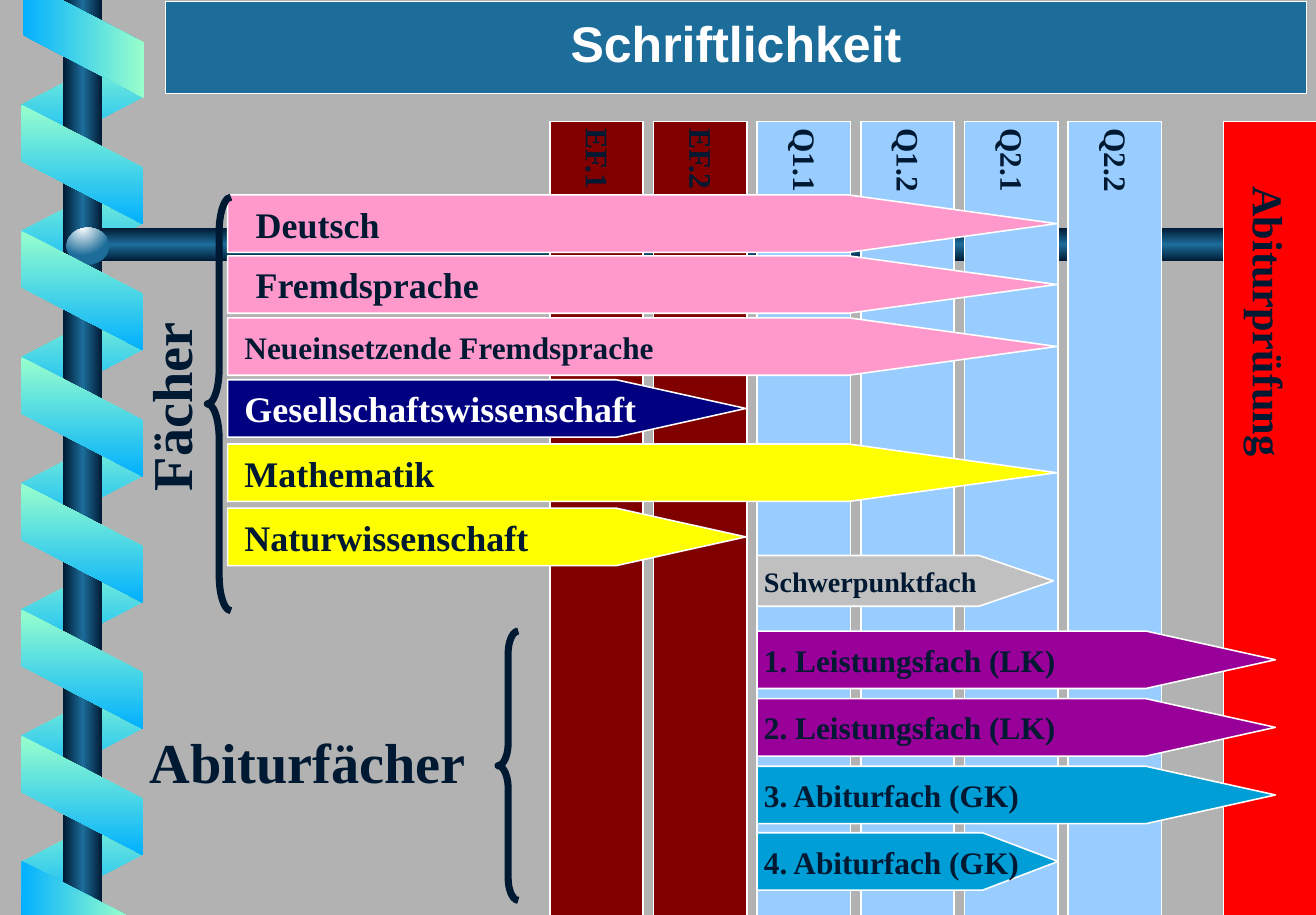
from pptx import Presentation
from pptx.dml.color import RGBColor
from pptx.enum.shapes import MSO_SHAPE
from pptx.enum.text import MSO_ANCHOR, PP_ALIGN
from pptx.oxml import parse_xml
from pptx.oxml.ns import nsdecls, qn
from pptx.util import Pt

PX = 9144  # 100 px to the inch
NAVY, BLUE, WHITE = "001932", "1C6D9A", "FFFFFF"
MAROON, SKY, RED = "800000", "99CCFF", "FF0000"
PINK, YELLOW, PURPLE, CYAN = "FF99CC", "FFFF00", "990099", "009ED6"
DOWN, RIGHT = '<a:lin ang="5400000" scaled="0"/>', '<a:lin ang="0" scaled="0"/>'
GLOW = '<a:path path="circle"><a:fillToRect l="38000" t="-20000" r="62000" b="120000"/></a:path>'
color = RGBColor.from_string


def paint(shape, fill=None, line=None, width=1, direction=RIGHT):
    """Fill with a colour, a list of evenly spaced gradient colours, or nothing."""
    shape.shadow.inherit = False
    if fill is None:
        shape.fill.background()
    else:
        shape.fill.solid()
        shape.fill.fore_color.rgb = color(fill if isinstance(fill, str) else fill[0])
    if isinstance(fill, list):
        stops = "".join(
            f'<a:gs pos="{100000 * i // (len(fill) - 1)}"><a:srgbClr val="{stop}"/></a:gs>'
            for i, stop in enumerate(fill))
        solid = shape.element.spPr.find(qn("a:solidFill"))
        solid.getparent().replace(solid, parse_xml(
            f'<a:gradFill {nsdecls("a")} rotWithShape="1"><a:gsLst>{stops}</a:gsLst>'
            f'{direction}</a:gradFill>'))
    if line:
        shape.line.color.rgb = color(line)
        shape.line.width = Pt(width)
    else:
        shape.line.fill.background()


def write(shape, text, size=20, fill=NAVY, font="Times New Roman",
          align=PP_ALIGN.LEFT, left=6, right=6, spacing=None):
    frame = shape.text_frame
    frame.word_wrap = True
    frame.vertical_anchor = MSO_ANCHOR.MIDDLE
    frame.margin_left, frame.margin_right = left * PX, right * PX
    frame.margin_top = frame.margin_bottom = 0
    paragraph = frame.paragraphs[0]
    paragraph.text = text
    paragraph.alignment = align
    if spacing:
        paragraph.line_spacing = spacing
    paragraph.font.name = font
    paragraph.font.size = Pt(size)
    paragraph.font.bold = True
    paragraph.font.color.rgb = color(fill)


presentation = Presentation()
presentation.slide_width, presentation.slide_height = 1168 * PX, 812 * PX
slide = presentation.slides.add_slide(presentation.slide_layouts[6])
slide.background.fill.solid()
slide.background.fill.fore_color.rgb = color("B2B2B2")
shapes = slide.shapes

# Spiral ribbon: rising bands behind the pole, falling bands in front of it
mint_to_blue = ["99FFCC", "01B0FF"]
blue_to_mint = mint_to_blue[::-1]
back, front = [], []
for turn in range(7):
    top = 37 + 112 * turn
    back.append(([(127, top + 49), (19, top + 105), (19, top + 56), (127, top)],
                 mint_to_blue, DOWN))
for turn in range(6):
    top = 93 + 112 * turn
    front.append(([(19, top), (127, top + 56), (127, top + 106), (19, top + 50)],
                  mint_to_blue, DOWN))
front.append(([(20, 0), (20, 31), (128, 87), (128, 38), (55, 0)], blue_to_mint, RIGHT))
front.append(([(19, 764), (112, 812), (19, 812)], blue_to_mint, RIGHT))

for layer in (back, front):
    for points, stops, direction in layer:
        builder = shapes.build_freeform(*points[0], scale=PX)
        builder.add_line_segments(points[1:])
        paint(builder.convert_to_shape(), stops, direction=direction)
    if layer is back:
        # Pole, crossbar and ball
        pole = shapes.add_shape(MSO_SHAPE.RECTANGLE, 56 * PX, 0, 35 * PX, 812 * PX)
        paint(pole, [NAVY, BLUE, NAVY])
        crossbar = shapes.add_shape(MSO_SHAPE.PENTAGON, 70 * PX, 202 * PX, 1098 * PX, 30 * PX)
        crossbar.adjustments[0] = 0.63
        crossbar.rotation = 180
        paint(crossbar, [NAVY, BLUE, NAVY], direction=DOWN)
        ball = shapes.add_shape(MSO_SHAPE.OVAL, 59 * PX, 202 * PX, 38 * PX, 33 * PX)
        paint(ball, ["FEFFFF", BLUE], direction=GLOW)

# Title
title = shapes.add_shape(MSO_SHAPE.RECTANGLE, 147 * PX, 1 * PX, 1013 * PX, 82 * PX)
paint(title, BLUE, WHITE, 0.75)
write(title, "Schriftlichkeit", size=32, fill=WHITE, font="Arial",
      align=PP_ALIGN.CENTER, spacing=0.85)

# Columns of the half-years and the final exam
half_years = ["EF.1", "EF.2", "Q1.1", "Q1.2", "Q2.1", "Q2.2"]
columns = [(488 + 92 * i, MAROON if i < 2 else SKY) for i in range(len(half_years))]
for left, fill in columns + [(1086, RED)]:
    column = shapes.add_shape(MSO_SHAPE.RECTANGLE, left * PX, 108 * PX, 83 * PX, 705 * PX)
    paint(column, fill, WHITE)

# Subject arrows: text, left, top, width, height, tip, fill, text size, text inset
arrows = [
    ("Deutsch", 202, 173, 736, 51, 185, PINK, 23, 25),
    ("Fremdsprache", 202, 227, 736, 51, 185, PINK, 23, 25),
    ("Neueinsetzende Fremdsprache", 202, 282, 736, 51, 185, PINK, 20, 15),
    ("Gesellschaftswissenschaft", 202, 337, 460, 51, 115, "000080", 23, 15),
    ("Mathematik", 202, 394, 736, 51, 185, YELLOW, 23, 15),
    ("Naturwissenschaft", 202, 451, 460, 51, 115, YELLOW, 23, 15),
    ("Schwerpunktfach", 672, 493, 263, 45, 66, "C0C0C0", 18, 6),
    ("1. Leistungsfach (LK)", 672, 560, 460, 51, 115, PURPLE, 20, 6),
    ("2. Leistungsfach (LK)", 672, 620, 460, 51, 115, PURPLE, 20, 6),
    ("3. Abiturfach (GK)", 672, 680, 460, 51, 115, CYAN, 20, 6),
    ("4. Abiturfach (GK)", 672, 739, 267, 51, 67, CYAN, 20, 6),
]
for text, left, top, width, height, tip, fill, size, inset in arrows:
    arrow = shapes.add_shape(MSO_SHAPE.PENTAGON, left * PX, top * PX, width * PX, height * PX)
    arrow.adjustments[0] = tip / height
    paint(arrow, fill, WHITE)
    write(arrow, text, size=size, fill=WHITE if fill == "000080" else NAVY,
          left=inset, right=0)

# Braces: left, top, width, height, curve height
for left, top, width, height, curve in [(184, 175, 21, 367, 31), (442, 560, 18, 239, 20)]:
    brace = shapes.add_shape(MSO_SHAPE.LEFT_BRACE, left * PX, top * PX, width * PX, height * PX)
    brace.adjustments[0] = curve / width
    paint(brace, line=NAVY, width=4.5)

# Free labels: text, left, top, width, height, rotation, size, alignment
labels = [(text, left - 8, 138, 102, 42, 90, 20, PP_ALIGN.LEFT)
          for text, (left, _) in zip(half_years, columns)]
labels += [
    ("Abiturprüfung", 982, 278, 290, 53, 90, 27, PP_ALIGN.LEFT),
    ("Abiturfächer", 127, 641, 322, 68, 0, 36, PP_ALIGN.LEFT),
    ("Fächer", -3, 327, 307, 68, 270, 36, PP_ALIGN.CENTER),
]
for text, left, top, width, height, rotation, size, align in labels:
    label = shapes.add_textbox(left * PX, top * PX, width * PX, height * PX)
    label.rotation = rotation
    write(label, text, size=size, align=align)

presentation.save("out.pptx")
